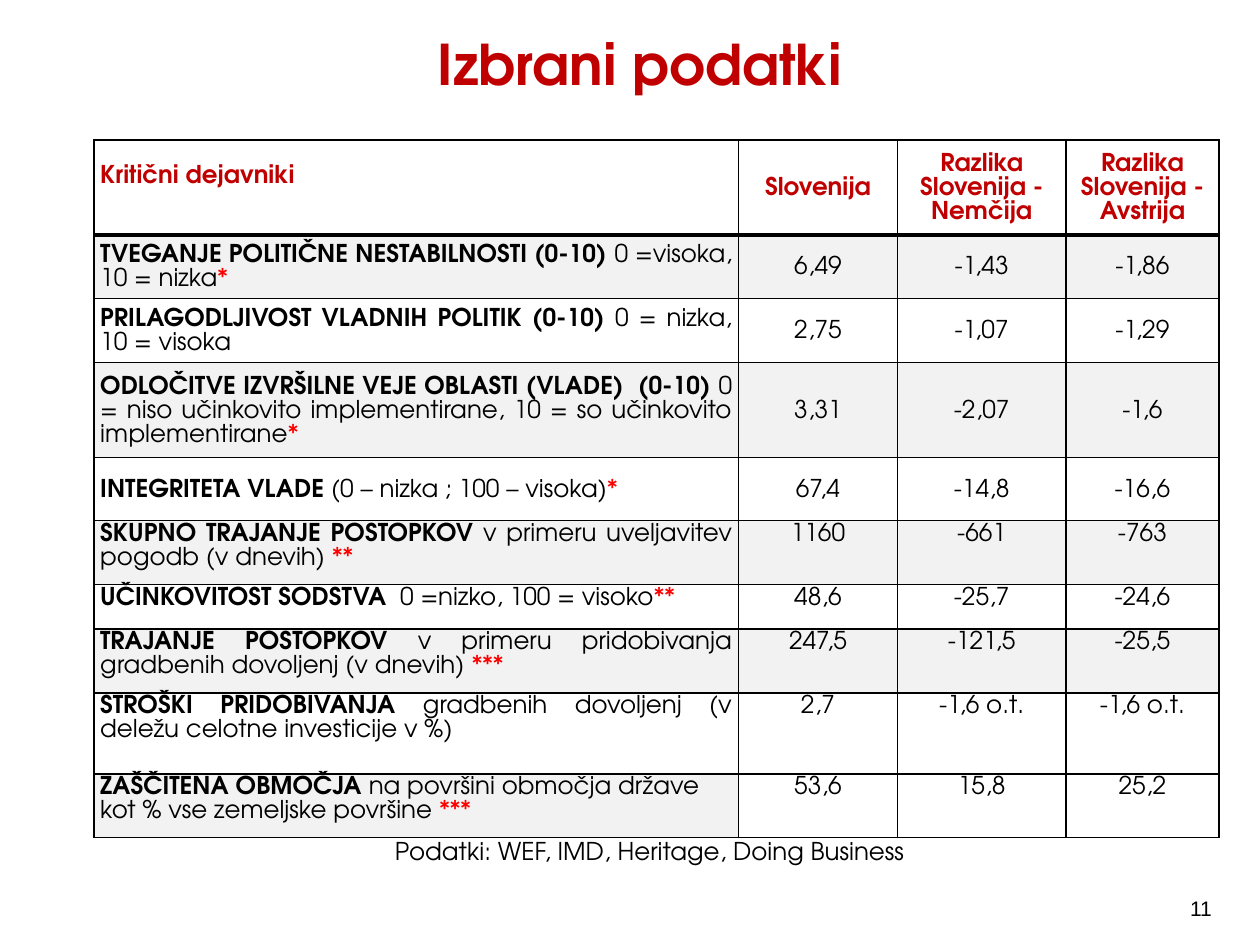
from lxml import etree
from pptx import Presentation
from pptx import util as u
from pptx.dml.color import RGBColor
from pptx.enum import text
from pptx.oxml import ns

BLACK = RGBColor(0x00, 0x00, 0x00)
WHITE = RGBColor(0xFF, 0xFF, 0xFF)
GREY = RGBColor(0xF2, 0xF2, 0xF2)
DARK_RED = RGBColor(0xC0, 0x00, 0x00)
RED = RGBColor(0xFF, 0x00, 0x00)

CENTER = text.PP_ALIGN.CENTER
JUSTIFY = text.PP_ALIGN.JUSTIFY
TOP = text.MSO_ANCHOR.TOP
MIDDLE = text.MSO_ANCHOR.MIDDLE

HEADERS = ["Kritični dejavniki", "Slovenija", "Razlika Slovenija - Nemčija",
           "Razlika Slovenija - Avstrija"]
# Bold factor name, explanation, footnote stars, values
FACTORS = [
    ("TVEGANJE POLITIČNE NESTABILNOSTI (0-10)", " 0 =visoka, 10 = nizka", "*",
     ["6,49", "-1,43", "-1,86"]),
    ("PRILAGODLJIVOST VLADNIH POLITIK (0-10)", " 0 = nizka, 10 = visoka", "",
     ["2,75", "-1,07", "-1,29"]),
    ("ODLOČITVE IZVRŠILNE VEJE OBLASTI (VLADE)  (0-10)",
     " 0 = niso učinkovito implementirane, 10 = so učinkovito implementirane", "*",
     ["3,31", "-2,07", "-1,6"]),
    ("INTEGRITETA VLADE", " (0 – nizka ; 100 – visoka)", "*",
     ["67,4", "-14,8", "-16,6"]),
    ("SKUPNO TRAJANJE POSTOPKOV", " v primeru uveljavitev pogodb (v dnevih) ", "**",
     ["1160", "-661", "-763"]),
    ("UČINKOVITOST SODSTVA", "  0 =nizko, 100 = visoko", "**",
     ["48,6", "-25,7", "-24,6"]),
    ("TRAJANJE POSTOPKOV", " v primeru pridobivanja gradbenih dovoljenj (v dnevih) ", "***",
     ["247,5", "-121,5", "-25,5"]),
    ("STROŠKI PRIDOBIVANJA", " gradbenih dovoljenj (v deležu celotne investicije v %)", "",
     ["2,7", "-1,6 o.t.", "-1,6 o.t."]),
    ("ZAŠČITENA OBMOČJA", " na površini območja države kot % vse zemeljske površine ", "***",
     ["53,6", "15,8", "25,2"]),
]
COLUMN_WIDTHS = [13, 3.2, 3.4, 3.08]
ROW_HEIGHTS = [1.9, 1.27, 1.27, 1.9, 1.27, 1.27, 0.9, 1.27, 1.63, 1.28]
MIDDLE_ROWS = 5  # the header and the first four factors are centred vertically


class SlideBuilder:
    """Holds the text style and the slide being built."""

    font_name = "TeX Gyre Adventor"
    size = 14
    line_spacing = 1.06

    def __init__(self, slide):
        self.slide = slide

    def style(self, paragraph, align, color=BLACK, bold=None, size=None, name=None):
        paragraph.alignment = align
        font = paragraph.font
        font.name = name or self.font_name
        font.size = u.Pt(size or self.size)
        font.color.rgb = color
        font.bold = bold

    def text_box(self, left, top, width, height, content, align,
                 anchor=TOP, wrap=True, **style):
        box = self.slide.shapes.add_textbox(u.Cm(left), u.Cm(top), u.Cm(width), u.Cm(height))
        frame = box.text_frame
        frame.word_wrap = wrap
        frame.vertical_anchor = anchor
        paragraph = frame.paragraphs[0]
        paragraph.text = content
        self.style(paragraph, align, **style)

    def table(self, left, top, widths, heights):
        frame = self.slide.shapes.add_table(
            len(heights), len(widths), u.Cm(left), u.Cm(top),
            u.Cm(sum(widths)), u.Cm(sum(heights)))
        table = frame.table
        table.first_row = table.horz_banding = False
        for column, width in zip(table.columns, widths):
            column.width = u.Cm(width)
        for row, height in zip(table.rows, heights):
            row.height = u.Cm(height)
        return table

    def borders(self, cell, **widths):
        """Draw black cell sides; widths are points, keyed L, R, T, B."""
        properties = cell._tc.get_or_add_tcPr()
        for side, width in widths.items():
            line = etree.SubElement(properties, ns.qn(f"a:ln{side}"), w=str(u.Pt(width)))
            fill = etree.SubElement(line, ns.qn("a:solidFill"))
            etree.SubElement(fill, ns.qn("a:srgbClr"), val=str(BLACK))

    def cell(self, cell, runs, align, anchor, fill, top=1, bottom=1, **style):
        """Fill a cell; runs are (text, bold, colour), where None keeps the paragraph's."""
        self.borders(cell, L=1, R=1, T=top, B=bottom)
        cell.fill.solid()
        cell.fill.fore_color.rgb = fill
        cell.margin_left = cell.margin_right = u.Cm(0.13)
        cell.margin_top, cell.margin_bottom = u.Cm(0.03), 0
        cell.vertical_anchor = anchor
        paragraph = cell.text_frame.paragraphs[0]
        paragraph.line_spacing = self.line_spacing
        self.style(paragraph, align, **style)
        for content, bold, color in runs:
            run = paragraph.add_run()
            run.text = content
            run.font.bold = bold
            if color is not None:
                run.font.color.rgb = color


def add_factor_table(builder):
    table = builder.table(1.89, 2.82, COLUMN_WIDTHS, ROW_HEIGHTS)
    for column, header in enumerate(HEADERS):
        builder.cell(table.cell(0, column), [(header, True, None)],
                     CENTER if column else JUSTIFY, MIDDLE, WHITE,
                     bottom=2.25, color=DARK_RED, bold=True)
    table.cell(0, 0).margin_bottom = u.Cm(0.5)

    for row, (name, explanation, stars, values) in enumerate(FACTORS, start=1):
        anchor = MIDDLE if row < MIDDLE_ROWS else TOP
        last = row == len(FACTORS)
        fill = GREY if row % 2 else WHITE
        top = 2.25 if row == 1 else 1
        runs = [(name, True, None), (explanation, None, None)]
        if stars:
            runs.append((stars, None, RED))
        builder.cell(table.cell(row, 0), runs,
                     text.PP_ALIGN.LEFT if last else JUSTIFY, anchor, fill, top)
        for column, value in enumerate(values, start=1):
            builder.cell(table.cell(row, column), [(value, None, None)], CENTER,
                         anchor, WHITE if last else fill, top)


def main():
    presentation = Presentation()
    presentation.slide_width, presentation.slide_height = u.Cm(25.4), u.Cm(19.05)
    builder = SlideBuilder(presentation.slides.add_slide(presentation.slide_layouts[6]))
    builder.text_box(1.5, -0.32, 22.8, 2.39, "Izbrani podatki", CENTER,
                     anchor=text.MSO_ANCHOR.BOTTOM, color=DARK_RED, bold=True, size=32)
    builder.text_box(5.5, 16.72, 15.2, 0.86,
                     "Podatki: WEF, IMD, Heritage, Doing Business", CENTER)
    add_factor_table(builder)
    builder.text_box(23.71, 17.93, 0.97, 0.76, "11", text.PP_ALIGN.RIGHT,
                     wrap=False, size=12, name="Arial")
    presentation.save("out.pptx")


if __name__ == "__main__":
    main()
